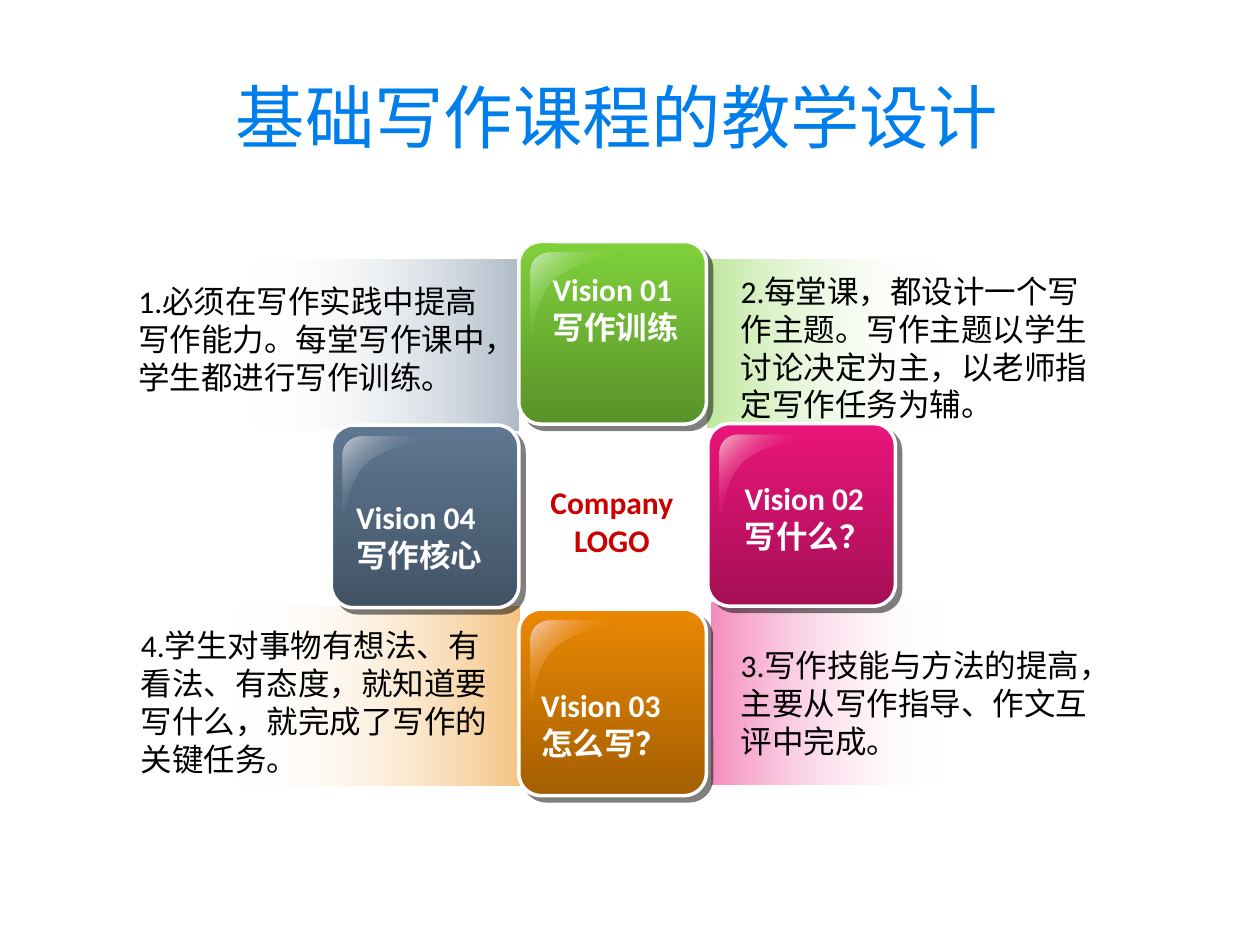
from collections import namedtuple

from lxml.etree import SubElement
from pptx import Presentation
from pptx.dml.color import RGBColor
from pptx.enum.shapes import MSO_SHAPE as Shape
from pptx.enum.text import MSO_ANCHOR as Anchor, MSO_AUTO_SIZE as AutoSize, PP_ALIGN as Align
from pptx.oxml.ns import qn
from pptx.util import Cm, Pt

Box = namedtuple("Box", "left top width height")  # lengths in centimetres

COLOURS = {
    "title": "007EEB", "text": "000000", "logo": "CC0000", "light": "FEFEFE",
    "white": "FFFFFF", "shadow": "000000",
    "green": "7FD13B", "green dark": "59922A", "green gloss": "CEEAC2",
    "pink": "EA157A", "pink dark": "A40F55", "pink gloss": "F5BFCD",
    "orange": "EB8803", "orange dark": "A45F02", "orange gloss": "F6D0BF",
    "slate": "5F7791", "slate dark": "425365", "slate gloss": "C7CCD3",
}
BODY_FONT = "Calibri"
TITLE_FONT = "Noto Sans CJK SC"

# Colour, band box, text box, text, and whether the band fades to the left
PANELS = [
    ("slate", Box(5.08, 5.23, 5.38, 3.45), Box(2.54, 5.56, 7.82, 2.54),
     "1.必须在写作实践中提高写作能力。每堂写作课中，学生都进行写作训练。", True),
    ("orange", Box(4.7, 12.22, 5.77, 3.61), Box(2.59, 12.5, 7.54, 4.11),
     "4.学生对事物有想法、有看法、有态度，就知道要写什么，就完成了写作的关键任务。", True),
    ("pink", Box(14.35, 12.14, 4.7, 3.68), Box(14.68, 12.9, 7.82, 2.57),
     "3.写作技能与方法的提高，主要从写作指导、作文互评中完成。", False),
    ("green", Box(14.27, 5.23, 4.78, 3.38), Box(14.68, 5.36, 7.82, 3.33),
     "2.每堂课，都设计一个写作主题。写作主题以学生讨论决定为主，以老师指定写作任务为辅。", False),
]

# Colour, tile box, label offset within the tile, label lines
TILES = [
    ("green", Box(10.46, 4.87, 3.78, 3.68), (0.43, 0.45), "Vision 01\n写作训练"),
    ("pink", Box(14.27, 8.54, 3.78, 3.68), (0.49, 1), "Vision 02\n写什么？"),
    ("orange", Box(10.46, 12.28, 3.78, 3.76), (0.2, 1.43), "Vision 03\n怎么写？"),
    ("slate", Box(6.68, 8.57, 3.78, 3.68), (0.25, 1.34), "Vision 04\n写作核心"),
]

# Gloss outline in fractions of its box: one point for a line, three for a curve
GLOSS_START = (0.2, 0)
GLOSS_SEGMENTS = [
    [(0.1, 0), (0, 0.08), (0, 0.2)],
    [(0, 0.98)],
    [(0.04, 1), (0.02, 0.51), (0.27, 0.29)],
    [(0.53, 0.07), (1, 0.05), (0.99, 0)],
]


def emu(box):
    return [Cm(value) for value in box]


def fill_gradient(shape, stops, angle):
    """Fill with stops of (position %, colour name, opacity %)."""
    shape.fill.gradient()
    shape.fill.gradient_angle = -angle % 360
    stop_list = shape._element.spPr.find(qn("a:gradFill")).find(qn("a:gsLst"))
    for old_stop in list(stop_list):
        stop_list.remove(old_stop)
    for position, name, opacity in stops:
        stop = SubElement(stop_list, qn("a:gs"), pos=str(position * 1000))
        colour = SubElement(stop, qn("a:srgbClr"), val=COLOURS[name])
        if opacity < 100:
            SubElement(colour, qn("a:alpha"), val=str(opacity * 1000))


def add_hard_shadow(shape):
    shape.shadow.inherit = False
    effects = shape._element.spPr.find(qn("a:effectLst"))
    shadow = SubElement(effects, qn("a:outerShdw"), blurRad="0", dist=str(Pt(4.2)),
                        dir="2700000", algn="ctr", rotWithShape="0")
    colour = SubElement(shadow, qn("a:srgbClr"), val=COLOURS["shadow"])
    SubElement(colour, qn("a:alpha"), val="50000")


def add_text(page, box, text, colour, size=18, bold=False, font=BODY_FONT,
             align=Align.LEFT, wrap=True):
    text_box = page.shapes.add_textbox(*emu(box))
    frame = text_box.text_frame
    frame.text = text
    frame.word_wrap = wrap
    frame.auto_size = AutoSize.SHAPE_TO_FIT_TEXT
    for para in frame.paragraphs:
        para.alignment = align
        for span in para.runs:
            span.font.name = font
            span.font.size = Pt(size)
            span.font.bold = bold
            span.font.color.rgb = RGBColor.from_string(COLOURS[colour])
    return text_box


def add_title(page, box):
    """Add the title, resting on the middle line of its box."""
    title = add_text(page, box, "基础写作课程的教学设计", "title", 39.6,
                     font=TITLE_FONT, align=Align.CENTER)
    frame = title.text_frame
    frame.auto_size = AutoSize.NONE
    frame.vertical_anchor = Anchor.BOTTOM
    frame.margin_bottom = Cm(box.height / 2)
    properties = frame.paragraphs[0].runs[0].font._element
    SubElement(properties, qn("a:ea"), typeface=TITLE_FONT)


def add_band(page, box, colour, fades_left):
    band = page.shapes.add_shape(Shape.RECTANGLE, *emu(box))
    band.shadow.inherit = False
    band.line.fill.background()
    ends = [("white", 0), (colour, 50)] if fades_left else [(colour, 50), ("white", 0)]
    fill_gradient(band, [(0, *ends[0]), (100, *ends[1])], 0)


def bend_segments(shape, box, segments):
    """Turn the three-point segments of a freeform into cubic curves."""
    lines = list(shape._element.iter(qn("a:lnTo")))
    for line, points in zip(lines, segments):
        if len(points) == 3:
            line.tag = qn("a:cubicBezTo")
            for index, (x, y) in enumerate(points[:-1]):
                control = SubElement(line, qn("a:pt"), x=str(Cm(x * box.width)),
                                     y=str(Cm(y * box.height)))
                line.insert(index, control)


def add_gloss(group, box, colour):
    ends = [(Cm(box.left + x * box.width), Cm(box.top + y * box.height))
            for x, y in [GLOSS_START] + [points[-1] for points in GLOSS_SEGMENTS]]
    builder = group.shapes.build_freeform(*ends[0])
    builder.add_line_segments(ends[1:], close=True)
    gloss = builder.convert_to_shape()
    bend_segments(gloss, box, GLOSS_SEGMENTS)
    gloss.shadow.inherit = False
    gloss.line.fill.background()
    shine = colour + " gloss"
    fill_gradient(gloss, [(0, shine, 100), (50, colour, 0), (100, shine, 100)], 45)


def add_tile(page, box, colour):
    group = page.shapes.add_group_shape()
    tile = group.shapes.add_shape(Shape.ROUNDED_RECTANGLE, *emu(box))
    tile.adjustments[0] = 0.12
    fill_gradient(tile, [(0, colour, 100), (100, colour + " dark", 100)], 90)
    tile.line.color.rgb = RGBColor.from_string(COLOURS["light"])
    tile.line.width = Pt(2)
    add_hard_shadow(tile)
    inset = 0.23
    add_gloss(group, Box(box.left + inset, box.top + inset,
                         box.width / 2, box.height / 2), colour)


def add_tile_label(page, box, offset, text):
    label_box = Box(box.left + offset[0], box.top + offset[1], 3.1, 1.8)
    add_text(page, label_box, text, "light", bold=True, wrap=False)


def main():
    deck = Presentation()
    deck.slide_width, deck.slide_height = Cm(25.4), Cm(19.05)
    page = deck.slides.add_slide(deck.slide_layouts[6])

    for colour, band_box, _, _, fades_left in PANELS:
        add_band(page, band_box, colour, fades_left)
    for colour, box, _, _ in TILES:
        add_tile(page, box, colour)
    for _, _, text_box, text, _ in PANELS:
        add_text(page, text_box, text, "text")
    for _, box, offset, label in TILES:
        add_tile_label(page, box, offset, label)
    add_text(page, Box(10.43, 9.62, 3.81, 1.78), "Company\nLOGO", "logo",
             bold=True, align=Align.CENTER)
    add_title(page, Box(2.38, 2.39, 20.12, 1.57))

    deck.save("out.pptx")


if __name__ == "__main__":
    main()
